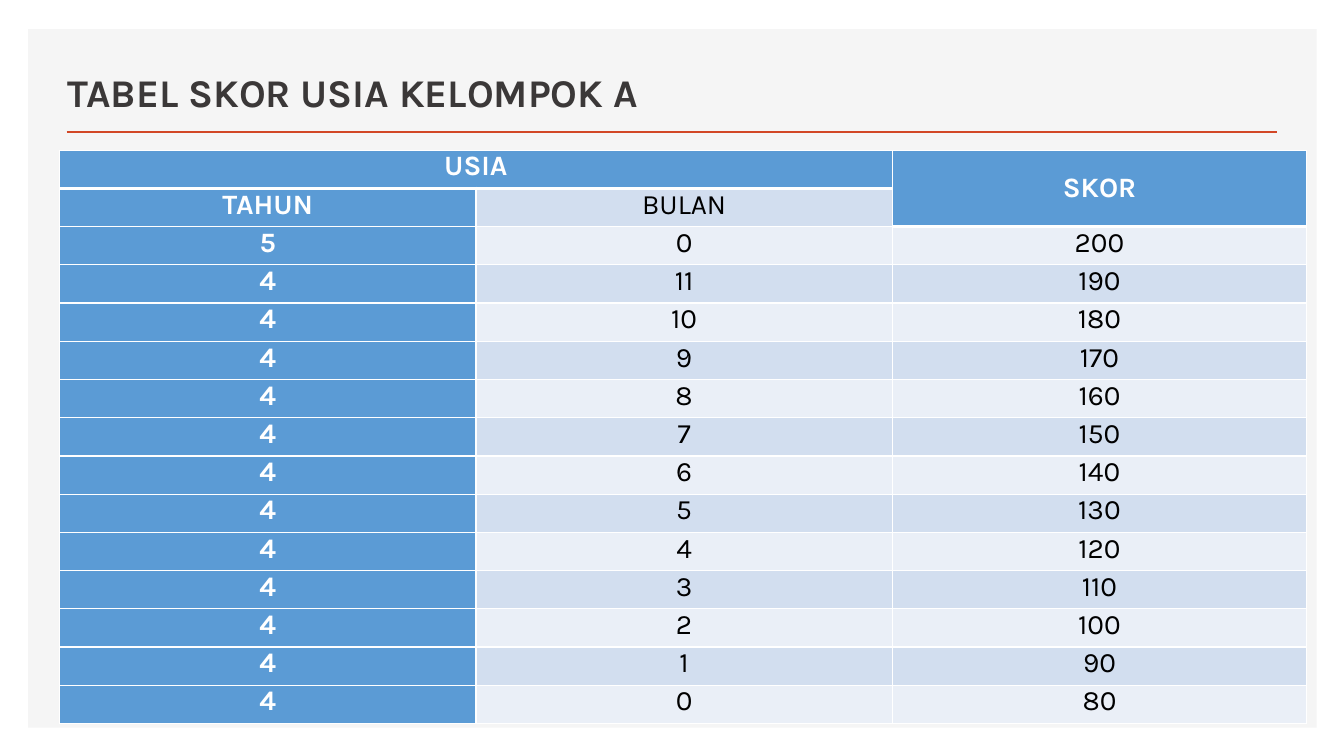
from lxml.etree import SubElement
from pptx import Presentation
from pptx.dml.color import RGBColor
from pptx.enum.shapes import MSO_CONNECTOR, MSO_SHAPE
from pptx.enum.text import MSO_ANCHOR, PP_ALIGN
from pptx.oxml.ns import qn
from pptx.util import Inches, Pt

WHITE = RGBColor(0xFF, 0xFF, 0xFF)
BLACK = RGBColor(0x00, 0x00, 0x00)
GREY = RGBColor(0xF5, 0xF5, 0xF5)
DARK = RGBColor(0x3B, 0x38, 0x38)
RED = RGBColor(0xD2, 0x47, 0x26)
BLUE = RGBColor(0x5B, 0x9B, 0xD5)
BANDS = (RGBColor(0xEA, 0xEF, 0xF7), RGBColor(0xD2, 0xDE, 0xEF))


class Page:
    font = "Karla"

    def __init__(self, slide):
        self.slide = slide

    def panel(self, left, top, width, height, color):
        box = self.slide.shapes.add_shape(
            MSO_SHAPE.RECTANGLE, Inches(left), Inches(top), Inches(width), Inches(height))
        box.shadow.inherit = False
        box.fill.solid()
        box.fill.fore_color.rgb = color
        box.line.fill.background()

    def rule(self, left, right, top, color, weight):
        line = self.slide.shapes.add_connector(
            MSO_CONNECTOR.STRAIGHT, Inches(left), Inches(top), Inches(right), Inches(top))
        line.line.color.rgb = color
        line.line.width = Pt(weight)
        SubElement(line._element.spPr, qn("a:effectLst"))

    def label(self, para, text, size, color, bold):
        run = para.add_run()
        run.text = text
        run.font.name = self.font
        run.font.size = Pt(size)
        run.font.bold = bold
        run.font.color.rgb = color

    def title(self, left, top, width, height, text):
        box = self.slide.shapes.add_textbox(
            Inches(left), Inches(top), Inches(width), Inches(height))
        frame = box.text_frame
        frame.word_wrap = True
        frame.vertical_anchor = MSO_ANCHOR.BOTTOM
        self.label(frame.paragraphs[0], text, 28, DARK, True)

    def edge(self, cell, side, weight):
        line = SubElement(cell._tc.get_or_add_tcPr(), qn("a:ln" + side), w=str(Pt(weight)))
        fill = SubElement(line, qn("a:solidFill"))
        SubElement(fill, qn("a:srgbClr"), val=str(WHITE))

    def cell(self, cell, text, fill, color, bold, top, bottom):
        for side, weight in zip("LRTB", (1, 1, top, bottom)):
            self.edge(cell, side, weight)
        cell.fill.solid()
        cell.fill.fore_color.rgb = fill
        cell.margin_left = cell.margin_right = Inches(0.06)
        cell.margin_top = cell.margin_bottom = 0
        para = cell.text_frame.paragraphs[0]
        para.alignment = PP_ALIGN.CENTER
        if text:
            self.label(para, text, 20, color, bold)

    def table(self, left, top, widths, height, rows):
        grid = self.slide.shapes.add_table(
            len(rows), len(widths), Inches(left), Inches(top),
            Inches(sum(widths)), Inches(height)).table
        for col, width in zip(grid.columns, widths):
            col.width = Inches(width)
        heavy = {(0, 0), (0, 1), (0, 2), (1, 2)}
        for i, row in enumerate(rows):
            for j, text in enumerate(row):
                head = i == 0 or j == 0 or (i, j) == (1, 2)
                self.cell(grid.cell(i, j), text,
                          BLUE if head else BANDS[i % 2],
                          WHITE if head else BLACK, head,
                          3 if (i - 1, j) in heavy else 1,
                          3 if (i, j) in heavy else 1)
        grid.cell(0, 0).merge(grid.cell(0, 1))
        grid.cell(0, 2).merge(grid.cell(1, 2))
        grid.cell(0, 2).vertical_anchor = MSO_ANCHOR.MIDDLE


def main():
    deck = Presentation()
    deck.slide_width, deck.slide_height = Inches(13.33), Inches(7.5)
    page = Page(deck.slides.add_slide(deck.slide_layouts[6]))
    page.panel(0.28, 0.29, 12.78, 6.93, GREY)
    page.rule(0.66, 12.67, 1.31, RED, 2)
    page.title(0.57, 0.49, 7.52, 0.7, "TABEL SKOR USIA KELOMPOK A")
    rows = [("USIA", "", "SKOR"), ("TAHUN", "BULAN", "")]
    for step in range(13):
        year, month = divmod(60 - step, 12)
        rows.append((str(year), str(month), str(200 - 10 * step)))
    page.table(0.59, 1.49, (4.13, 4.13, 4.11), 5.69, rows)
    deck.save("out.pptx")


if __name__ == "__main__":
    main()
